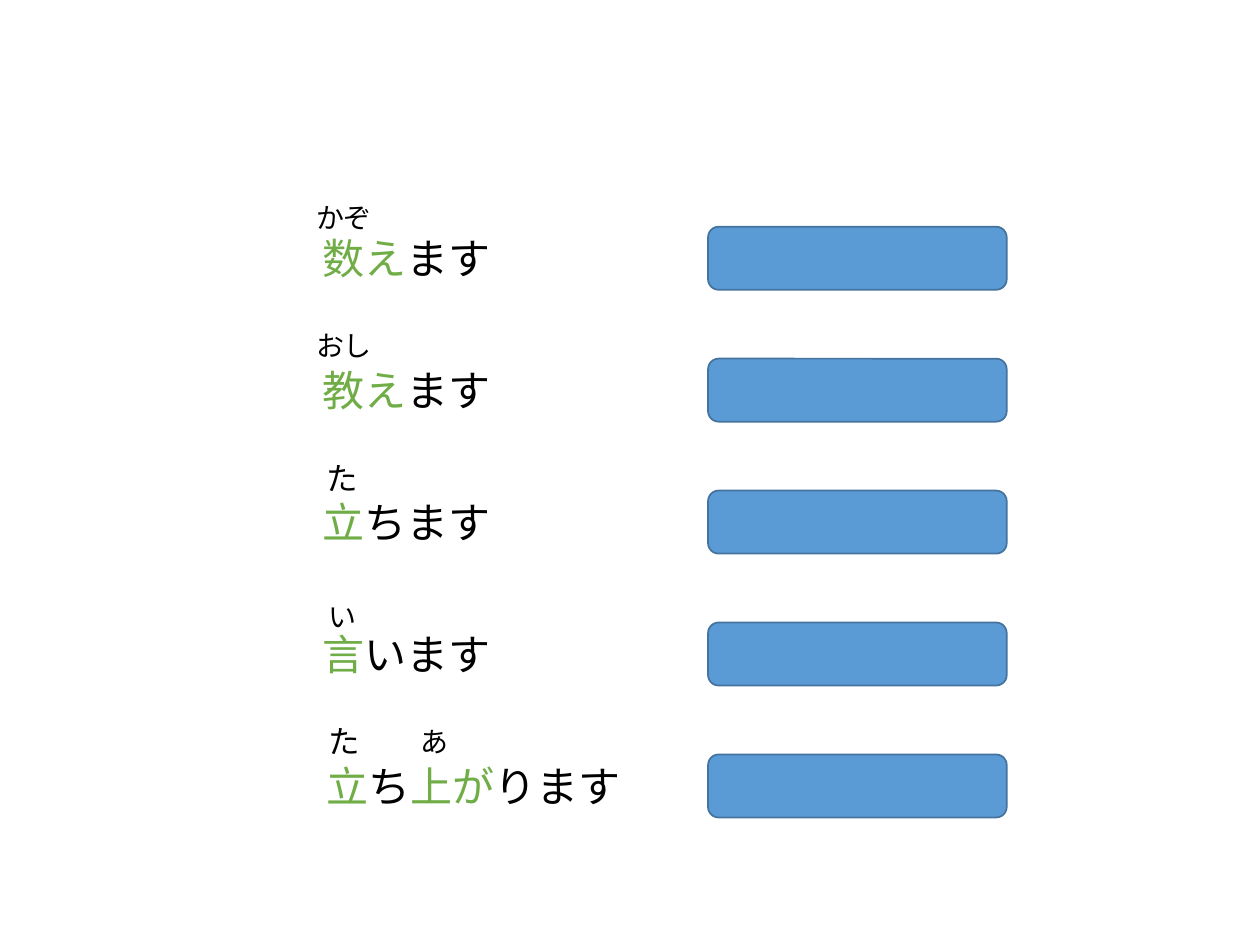
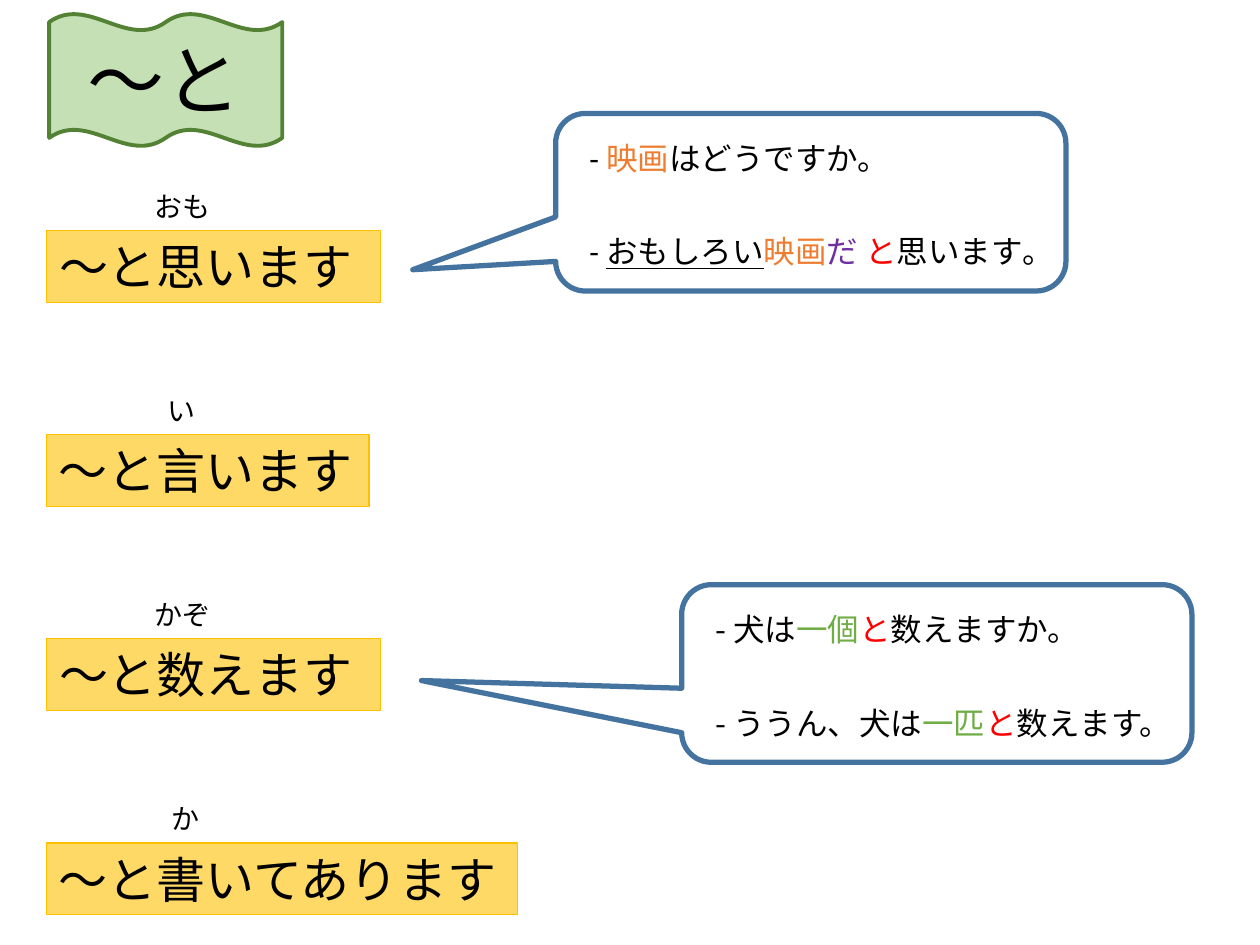
from pptx import Presentation
from pptx.dml.color import RGBColor
from pptx.enum.shapes import MSO_SHAPE as SHAPE
from pptx.enum.text import MSO_ANCHOR as ANCHOR, MSO_AUTO_SIZE as AUTO, PP_ALIGN as ALIGN
from pptx.oxml.ns import qn
from pptx.util import Inches, Pt
from lxml.etree import SubElement

CJK, LATIN = "Noto Sans CJK SC", "Calibri"
BLACK, GREEN, RED, ORANGE, PURPLE = "000000", "70AD47", "FF0000", "ED7D31", "7030A0"
BLUE, NAVY = "5B9BD5", "43739E"


def rgb(value):
    return RGBColor.from_string(value)


def cjk(text, color=BLACK, **fmt):
    return text, color, dict(name=CJK, **fmt)


def latin(text, color=BLACK, **fmt):
    return text, color, dict(name=LATIN, **fmt)


class Deck:
    COLUMNS, ROWS = 100, 75

    def __init__(self):
        self.prs = Presentation()
        self.prs.slide_width, self.prs.slide_height = Inches(10), Inches(7.5)
        self.s = None

    def slide(self):
        self.s = self.prs.slides.add_slide(self.prs.slide_layouts[6])

    def place(self, x, y, w, h):
        col = self.prs.slide_width / self.COLUMNS
        row = self.prs.slide_height / self.ROWS
        return int(x * col), int(y * row), int(w * col), int(h * row)

    def fill_text(self, sp, runs, size):
        tf = sp.text_frame
        layout = dict(word_wrap=False, auto_size=AUTO.SHAPE_TO_FIT_TEXT,
                      vertical_anchor=ANCHOR.TOP)
        for key, value in layout.items():
            setattr(tf, key, value)
        p = tf.paragraphs[0]
        p.alignment = ALIGN.LEFT
        for text, color, fmt in runs:
            r = p.add_run()
            r.text = text
            r.font.color.rgb = rgb(color)
            for key, value in dict(size=Pt(size), **fmt).items():
                setattr(r.font, key, value)
            SubElement(r.font._element, qn("a:ea"), typeface=CJK)

    def text(self, x, y, w, h, runs, size):
        self.fill_text(self.s.shapes.add_textbox(*self.place(x, y, w, h)), runs, size)

    def shape(self, kind, x, y, w, h, line, width, fill=None, adjust=()):
        sp = self.s.shapes.add_shape(kind, *self.place(x, y, w, h))
        sp.shadow.inherit = False
        if fill:
            sp.fill.solid()
            sp.fill.fore_color.rgb = rgb(fill)
        else:
            sp.fill.background()
        sp.line.color.rgb = rgb(line)
        sp.line.width = Pt(width)
        for i, value in enumerate(adjust):
            sp.adjustments[i] = value
        return sp

    def label(self, x, y, w, h, runs, size):
        sp = self.shape(SHAPE.RECTANGLE, x, y, w, h, "FFC000", 0.75, "FFD966")
        self.fill_text(sp, runs, size)

    def reading(self, x, y, run, size=16):
        width = 2.1 + 2.2 * len(run[0]) * size / 16
        self.text(x, y, width, 4 if size == 18 else 3.7, [run], size)

    def dialogue(self, x, y, pointer, lines):
        for i, (width, runs) in enumerate(lines):
            self.text(x + 1.7, y + 1.55 + 7.4 * i, width, 4, runs, 18)
        self.shape(SHAPE.ROUNDED_RECTANGULAR_CALLOUT, x, y, 40.5, 14.1, NAVY, 3,
                   adjust=(*pointer, 0.167))


def verb_slide(deck):
    deck.slide()
    masu = latin("ます")
    verbs = [
        (24.6, 15.5, [cjk("数え", GREEN), masu], [(24.1, 15.4, latin("かぞ"), 16)]),
        (24.6, 15.5, [cjk("教え", GREEN), masu], [(24.1, 25.6, latin("おし"), 16)]),
        (24.6, 15.5, [cjk("立", GREEN), latin("ちます")], [(24.9, 35.9, latin("た"), 18)]),
        (24.6, 15.5, [cjk("言", GREEN), cjk("い"), masu], [(25.1, 47.1, cjk("い"), 16)]),
        (24.9, 25.6, [cjk("立", GREEN), cjk("ち"), cjk("上が", GREEN), cjk("り"), masu],
         [(25.1, 56.8, latin("た"), 18), (32.4, 57, cjk("あ"), 16)]),
    ]
    for i, (x, width, runs, readings) in enumerate(verbs):
        y = 18 + 10.47 * i
        deck.text(x, y, width, 5, runs, 24)
        for reading in readings:
            deck.reading(*reading)
        deck.shape(SHAPE.ROUNDED_RECTANGLE, 56.2, y, 23.7, 5, NAVY, 1, BLUE)


def quotation_slide(deck):
    deck.slide()
    su = cjk("す")
    phrases = [
        (26.5, [latin("〜と思いま"), su], 11.3, latin("おも")),
        (25.6, [latin("〜と言いま"), su], 12.3, latin("い")),
        (26.5, [latin("〜と"), cjk("数え"), latin("ま"), su], 11.3, latin("かぞ")),
        (37.4, [latin("〜と"), cjk("書いてあります")], 12.6, latin("か")),
    ]
    for i, (width, runs, reading_x, reading) in enumerate(phrases):
        y = 18.3 + 16.2 * i
        deck.label(3.7, y, width, 5.7, runs, 28)
        deck.reading(reading_x, y - 3.75, reading)

    to = latin("と", RED)
    count = [to, cjk("数え"), latin("ま")]
    deck.dialogue(54.1, 46.4, (-1.01, 0.04), [
        (32.9, [cjk("- 犬は"), cjk("一個", GREEN), *count, cjk("すか。")]),
        (40.5, [cjk("- ううん、犬は"), cjk("一匹", GREEN), *count, cjk("す。")]),
    ])
    film = latin("映画", ORANGE)
    deck.dialogue(44.1, 9, (-0.78, 0.38), [
        (26.1, [latin("- "), film, latin("はどうで"), su, latin("か。")]),
        (40.6, [latin("- "), latin("おもしろい", underline=True), film,
                latin("だ ", PURPLE), to, latin("思いま"), su, latin("。")]),
    ])
    deck.shape(SHAPE.DOUBLE_WAVE, 3.9, 1.1, 18.5, 10.5, "548235", 2.25, "C5E0B4")
    deck.text(6, 2.1, 14.4, 8.4, [latin("〜と")], 44)


def main():
    deck = Deck()
    verb_slide(deck)
    quotation_slide(deck)
    deck.prs.save("out.pptx")


if __name__ == "__main__":
    main()
